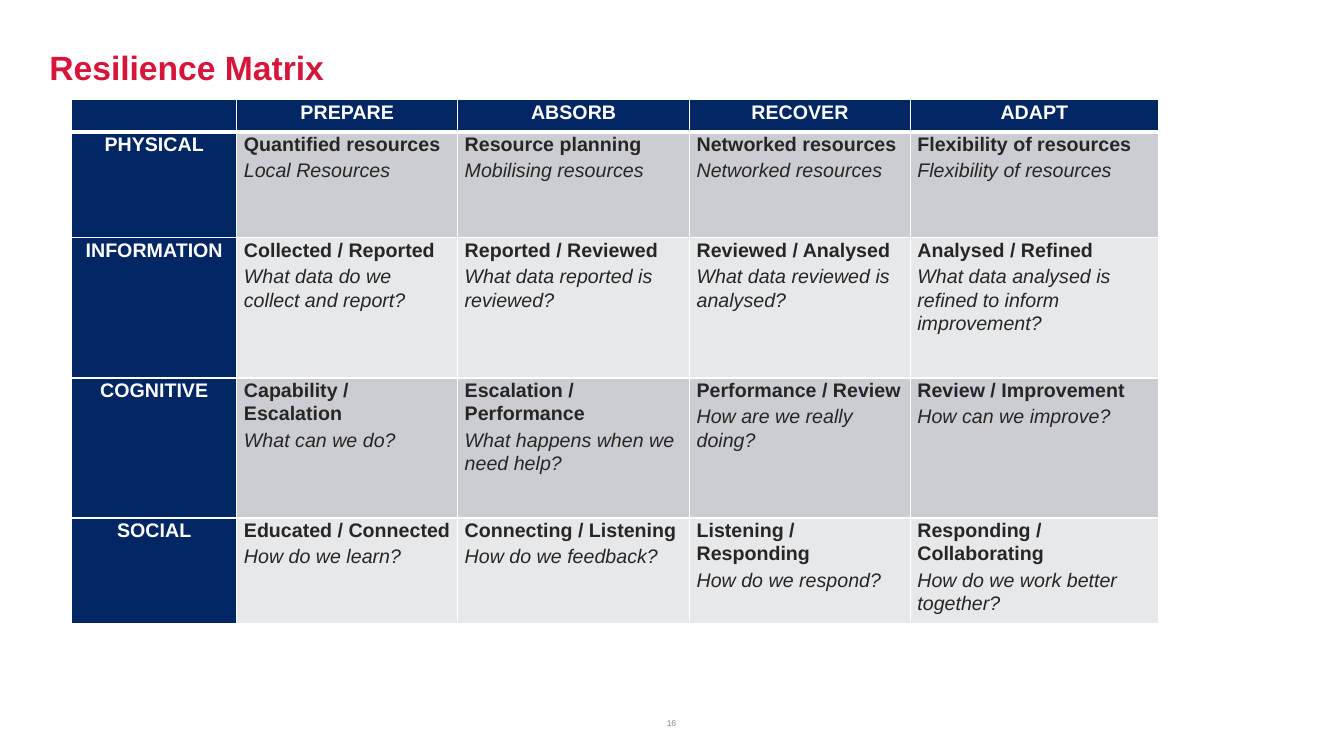
"""Build the Resilience Matrix slide."""
from lxml.etree import SubElement
from pptx import Presentation
from pptx.dml.color import RGBColor
from pptx.enum.text import MSO_ANCHOR, PP_ALIGN
from pptx.oxml.ns import qn
from pptx.util import Inches, Pt

COLORS = {
    "red": "D7153A",
    "navy": "002664",
    "dark_band": "CCCDD3",
    "light_band": "E7E8EA",
    "text": "262626",
    "number": "7F7F7F",
    "white": "FFFFFF",
}
PHASES = ["", "PREPARE", "ABSORB", "RECOVER", "ADAPT"]
DOMAINS = [
    ("PHYSICAL", [
        ("Quantified resources", "Local Resources"),
        ("Resource planning", "Mobilising resources"),
        ("Networked resources", "Networked resources"),
        ("Flexibility of resources", "Flexibility of resources"),
    ]),
    ("INFORMATION", [
        ("Collected / Reported", "What data do we collect and report?"),
        ("Reported / Reviewed", "What data reported is reviewed?"),
        ("Reviewed / Analysed", "What data reviewed is analysed?"),
        ("Analysed / Refined", "What data analysed is refined to inform improvement?"),
    ]),
    ("COGNITIVE", [
        ("Capability / Escalation", "What can we do?"),
        ("Escalation / Performance", "What happens when we need help?"),
        ("Performance / Review", "How are we really doing?"),
        ("Review / Improvement", "How can we improve?"),
    ]),
    ("SOCIAL", [
        ("Educated / Connected", "How do we learn?"),
        ("Connecting / Listening", "How do we feedback?"),
        ("Listening / Responding", "How do we respond?"),
        ("Responding / Collaborating", "How do we work better together?"),
    ]),
]
COLUMN_WIDTHS = [1.64, 2.19, 2.3, 2.19, 2.46]
ROW_HEIGHTS = [0.32, 1.05, 1.39, 1.39, 1.05]


def style_font(paragraph, size, color, bold=False, italic=False):
    font = paragraph.font
    font.name = "Arial"
    font.size = Pt(size)
    font.bold = bold
    font.italic = italic
    font.color.rgb = RGBColor.from_string(COLORS[color])


def style_cell(cell, fill, bottom_width):
    cell.margin_left = cell.margin_right = Inches(0.07)
    cell.margin_top = cell.margin_bottom = 0
    properties = cell._tc.get_or_add_tcPr()
    for side in ("lnL", "lnR", "lnT", "lnB"):
        width = bottom_width if side == "lnB" else 1
        border = SubElement(properties, qn(f"a:{side}"), w=str(Pt(width)))
        border_fill = SubElement(border, qn("a:solidFill"))
        SubElement(border_fill, qn("a:srgbClr"), val=COLORS["white"])
    cell.fill.solid()
    cell.fill.fore_color.rgb = RGBColor.from_string(COLORS[fill])


presentation = Presentation()
presentation.slide_width = Inches(13.33)
presentation.slide_height = Inches(7.5)
slide = presentation.slides.add_slide(presentation.slide_layouts[6])

labels = [
    ("Resilience Matrix", (0.49, 0.4, 12.36, 0.59), MSO_ANCHOR.MIDDLE, PP_ALIGN.LEFT, 24, "red", True),
    ("16", (5.74, 6.92, 1.84, 0.3), MSO_ANCHOR.BOTTOM, PP_ALIGN.CENTER, 6, "number", False),
]
for text, box, anchor, alignment, size, color, bold in labels:
    frame = slide.shapes.add_textbox(*map(Inches, box)).text_frame
    frame.word_wrap = True
    frame.vertical_anchor = anchor
    frame.margin_left = frame.margin_right = frame.margin_top = frame.margin_bottom = 0
    paragraph = frame.paragraphs[0]
    paragraph.text = text
    paragraph.alignment = alignment
    paragraph.line_spacing = 0.9 if bold else 1.0
    style_font(paragraph, size, color, bold)

table = slide.shapes.add_table(
    len(ROW_HEIGHTS), len(COLUMN_WIDTHS), Inches(0.71), Inches(0.99),
    Inches(sum(COLUMN_WIDTHS)), Inches(sum(ROW_HEIGHTS)),
).table
for column, width in zip(table.columns, COLUMN_WIDTHS):
    column.width = Inches(width)
for row, height in zip(table.rows, ROW_HEIGHTS):
    row.height = Inches(height)

headings = [(0, index, phase) for index, phase in enumerate(PHASES)]
headings += [(index, 0, domain) for index, (domain, _) in enumerate(DOMAINS, 1)]
for row_index, column_index, heading in headings:
    cell = table.cell(row_index, column_index)
    style_cell(cell, "navy", 3 if row_index == 0 else 1)
    paragraph = cell.text_frame.paragraphs[0]
    paragraph.text = heading
    paragraph.alignment = PP_ALIGN.CENTER
    paragraph.line_spacing = 1.07
    style_font(paragraph, 14, "white", bold=True)

for row_index, (_, entries) in enumerate(DOMAINS, 1):
    band = "dark_band" if row_index % 2 else "light_band"
    for column_index, (topic, question) in enumerate(entries, 1):
        cell = table.cell(row_index, column_index)
        style_cell(cell, band, 1)
        cell.text = f"{topic}\n{question}"
        topic_paragraph, question_paragraph = cell.text_frame.paragraphs
        topic_paragraph.line_spacing = question_paragraph.line_spacing = 1.07
        question_paragraph.space_before = Pt(2)
        style_font(topic_paragraph, 14, "text", bold=True)
        style_font(question_paragraph, 14, "text", italic=True)

presentation.save("out.pptx")
